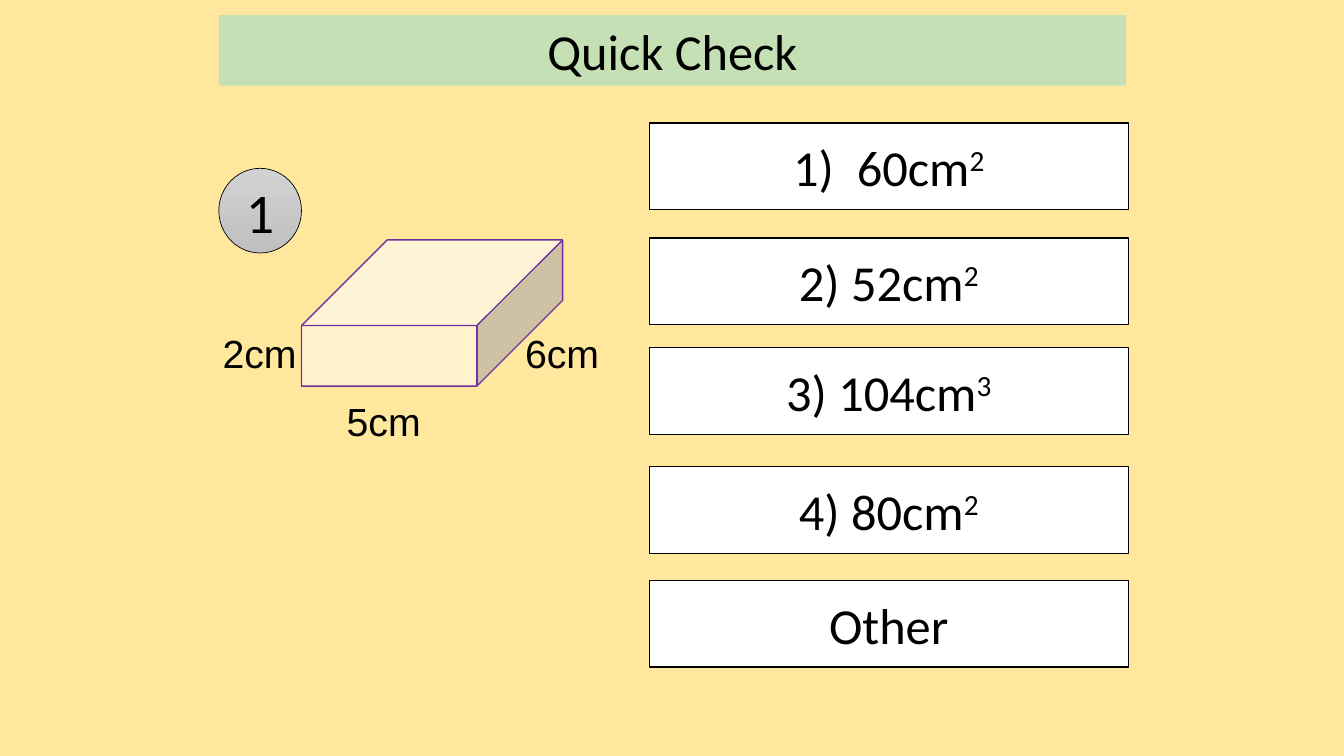
from pptx import Presentation
from pptx.dml.color import RGBColor
from pptx.enum.shapes import MSO_SHAPE
from pptx.enum.text import MSO_ANCHOR, MSO_AUTO_SIZE, PP_ALIGN
from pptx.util import Inches, Pt

CUBE, OVAL, RECTANGLE = MSO_SHAPE.CUBE, MSO_SHAPE.OVAL, MSO_SHAPE.RECTANGLE
MIDDLE, CENTER = MSO_ANCHOR.MIDDLE, PP_ALIGN.CENTER
FIXED, GROW = MSO_AUTO_SIZE.NONE, MSO_AUTO_SIZE.SHAPE_TO_FIT_TEXT

SAND = RGBColor(0xFF, 0xE7, 0x9E)
CREAM = RGBColor(0xFF, 0xF2, 0xCC)
PURPLE = RGBColor(0x70, 0x30, 0xA0)
GREEN = RGBColor(0xC5, 0xE0, 0xB4)
LIGHT_GREY = RGBColor(0xD2, 0xD2, 0xD2)
MID_GREY = RGBColor(0xC0, 0xC0, 0xC0)
WHITE = RGBColor(0xFF, 0xFF, 0xFF)
BLACK = RGBColor(0, 0, 0)

ANSWERS = [
    (1.22, "1)  60cm", "2"),
    (2.36, "2) 52cm", "2"),
    (3.45, "3) 104cm", "3"),
    (4.63, "4) 80cm", "2"),
    (5.76, "Other", ""),
]
EDGE_LABELS = [(3.34, 3.89, "5cm"), (2.11, 3.22, "2cm"), (5.11, 3.22, "6cm")]


def format_run(span, size, font="Calibri"):
    span.font.size = Pt(size)
    span.font.name = font
    span.font.color.rgb = BLACK


def write_centered(shape, text, size):
    frame = shape.text_frame
    frame.text = text
    frame.word_wrap = True
    frame.vertical_anchor = MIDDLE
    para = frame.paragraphs[0]
    para.alignment = CENTER
    format_run(para.runs[0], size)
    return para


def add_outlined(shapes, kind, left, top, width, height, color, weight):
    shape = shapes.add_shape(
        kind, Inches(left), Inches(top), Inches(width), Inches(height))
    shape.shadow.inherit = False
    shape.line.color.rgb = color
    shape.line.width = Pt(weight)
    return shape


def place_title(page):
    title = page.shapes.title
    title.left, title.top = Inches(2.17), Inches(0.15)
    title.width, title.height = Inches(9), Inches(0.7)
    title.fill.solid()
    title.fill.fore_color.rgb = GREEN
    write_centered(title, "Quick Check", 36)
    title.text_frame.auto_size = FIXED


def add_cuboid(shapes):
    cuboid = add_outlined(shapes, CUBE, 2.99, 2.38, 2.59, 1.45, PURPLE, 1)
    cuboid.adjustments[0] = 0.586
    cuboid.fill.solid()
    cuboid.fill.fore_color.rgb = CREAM


def add_edge_label(shapes, left, top, text):
    box = shapes.add_textbox(
        Inches(left), Inches(top), Inches(0.95), Inches(0.57))
    frame = box.text_frame
    frame.text = text
    frame.word_wrap = False
    frame.auto_size = GROW
    format_run(frame.paragraphs[0].runs[0], 28, "Arial")


def add_number_badge(shapes, number):
    badge = add_outlined(shapes, OVAL, 2.17, 1.67, 0.82, 0.84, BLACK, 0.5)
    badge.fill.gradient()
    badge.fill.gradient_angle = 270
    for stop, color in zip(badge.fill.gradient_stops, (LIGHT_GREY, MID_GREY)):
        stop.color.rgb = color
    write_centered(badge, number, 40)


def add_answer(shapes, top, text, power):
    answer = add_outlined(shapes, RECTANGLE, 6.44, top, 4.75, 0.86, BLACK, 1)
    answer.fill.solid()
    answer.fill.fore_color.rgb = WHITE
    para = write_centered(answer, text, 36)
    if power:
        span = para.add_run()
        span.text = power
        format_run(span, 36)
        span.font._element.set("baseline", "30000")


def main():
    deck = Presentation()
    deck.slide_width, deck.slide_height = Inches(13.33), Inches(7.5)
    page = deck.slides.add_slide(deck.slide_layouts[5])
    page.background.fill.solid()
    page.background.fill.fore_color.rgb = SAND

    place_title(page)
    question = page.shapes.add_group_shape()
    add_cuboid(question.shapes)
    for left, top, text in EDGE_LABELS:
        add_edge_label(question.shapes, left, top, text)
    add_number_badge(question.shapes, "1")
    for top, text, power in ANSWERS:
        add_answer(page.shapes, top, text, power)

    deck.save("out.pptx")


if __name__ == "__main__":
    main()
